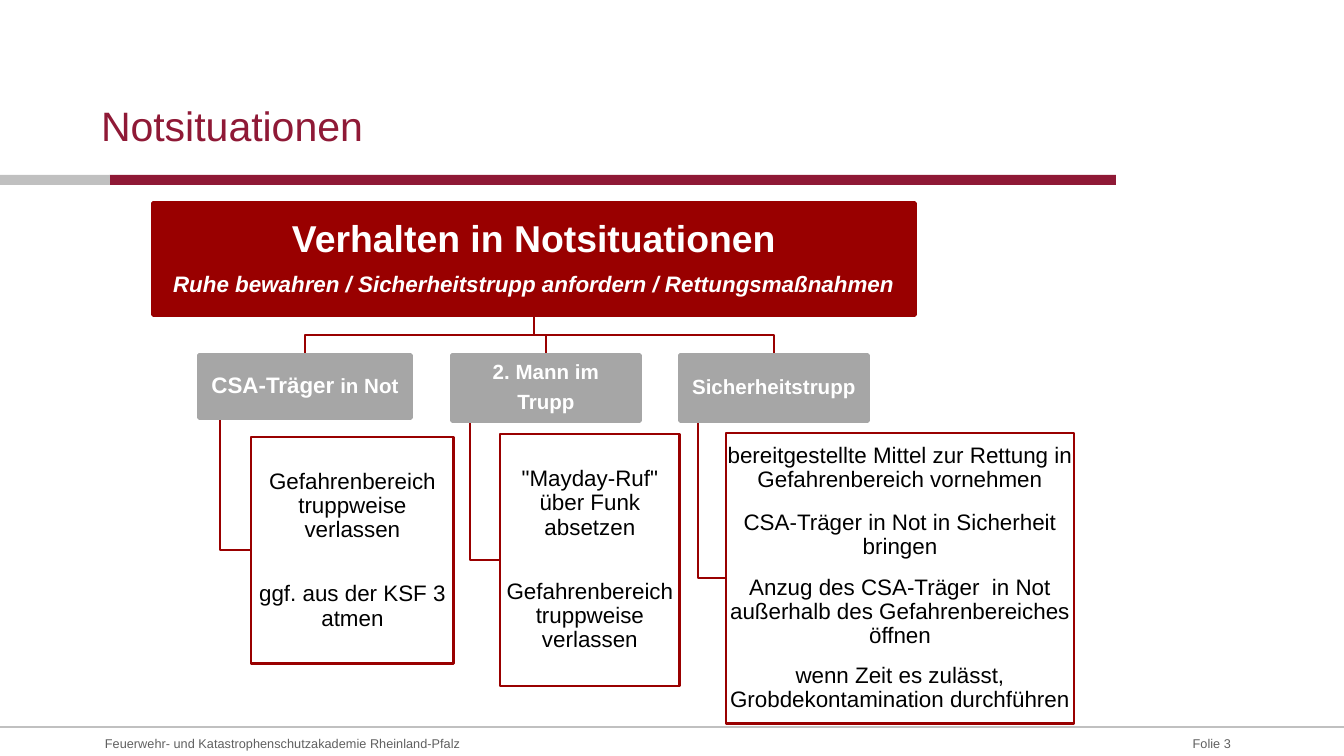
from pptx import Presentation
from pptx.dml.color import RGBColor as RGB
from pptx.enum.shapes import MSO_CONNECTOR as LINK, MSO_SHAPE as FORM
from pptx.enum.text import MSO_ANCHOR as ANCHOR, PP_ALIGN as ALIGN
from pptx.oxml.ns import qn
from pptx.util import Pt
from lxml.etree import SubElement

PX = 914400 / 134.4
WINE, RED, GREY = "8F1936", "990000", "A6A6A6"
SILVER, DARK, WHITE, BLACK = "C0C0C0", "606060", "FFFFFF", "000000"


def emu(*vals):
    return [round(v * PX) for v in vals]


def tint(code):
    return RGB.from_string(code)


class Board:
    """Draws styled elements on the current slide."""

    font = "Arial"

    def __init__(self, slide):
        self.slide = slide
        self.shapes = slide.shapes

    def style(self, font, size, color, bold=False):
        font.name, font.size, font.bold = self.font, Pt(size), bold
        font.color.rgb = tint(color)

    def label(self, shape, lines, size, color, bold=False, align=ALIGN.CENTER,
              anchor=ANCHOR.MIDDLE, pad=1, lead=0.9, gaps=()):
        frame = shape.text_frame
        frame.word_wrap, frame.vertical_anchor = True, anchor
        frame.margin_left = frame.margin_right = emu(pad)[0]
        frame.margin_top = frame.margin_bottom = emu(pad)[0]
        frame.text = "\n".join(lines)
        for par in frame.paragraphs:
            par.alignment, par.line_spacing = align, lead
            par.space_before = par.space_after = Pt(0)
            for run in par.runs:
                self.style(run.font, size, color, bold)
        for par, gap in zip(frame.paragraphs, gaps):
            par.space_after = Pt(gap)
        return frame

    def title(self, text, *area):
        shape = self.shapes.title
        shape.left, shape.top, shape.width, shape.height = emu(*area)
        self.label(shape, [text], 22, WINE, align=ALIGN.LEFT,
                   anchor=ANCHOR.BOTTOM, pad=0, lead=1)

    def note(self, text, align, *area):
        shape = self.shapes.add_textbox(*emu(*area))
        self.label(shape, [text], 6.8, DARK, align=align, pad=0, lead=1)

    def box(self, area, fill, line=None, width=2):
        shape = self.shapes.add_shape(FORM.RECTANGLE, *emu(*area))
        shape.shadow.inherit = False
        shape.fill.solid()
        shape.fill.fore_color.rgb = tint(fill)
        if line:
            shape.line.color.rgb = tint(line)
            shape.line.width = Pt(width)
        else:
            shape.line.fill.background()
        return shape

    def rule(self, *ends):
        line = self.shapes.add_connector(LINK.STRAIGHT, *emu(*ends))
        line.line.color.rgb = tint(SILVER)
        line.line.width = Pt(0.75)
        SubElement(line._element.spPr, qn("a:effectLst"))

    def route(self, start, *stops):
        pen = self.shapes.build_freeform(*start, scale=PX)
        pen.add_line_segments(stops, close=False)
        shape = pen.convert_to_shape()
        shape.shadow.inherit = False
        shape.fill.background()
        shape.line.color.rgb = tint(RED)
        shape.line.width = Pt(1.5)


HEAD = (153, 203, 762, 112)
BRANCHES = [
    ((199, 355, 212, 63), ["CSA-Träger"], (251, 437, 203, 227),
     ["Gefahrenbereich truppweise verlassen", "ggf. aus der KSF 3 atmen"],
     [21.5]),
    ((452, 355, 188, 66), ["2. Mann im", "Trupp"], (500, 434, 180, 252),
     ['"Mayday-Ruf" über Funk absetzen',
      "Gefahrenbereich truppweise verlassen"], [21.5]),
    ((680, 355, 188, 66), ["Sicherheitstrupp"], (726, 433, 348, 291),
     ["bereitgestellte Mittel zur Rettung in Gefahrenbereich vornehmen",
      "CSA-Träger in Not in Sicherheit bringen",
      "Anzug des CSA-Träger  in Not außerhalb des Gefahrenbereiches öffnen",
      "wenn Zeit es zulässt, Grobdekontamination durchführen"],
     [10, 8.6, 8.6]),
]


def main():
    deck = Presentation()
    deck.slide_width, deck.slide_height = emu(1344, 756)
    board = Board(deck.slides.add_slide(deck.slide_layouts[5]))

    board.box((110, 175, 1006, 10), WINE)
    board.box((0, 175, 110, 10), SILVER)
    board.rule(0, 727, 1344, 727)
    board.note("Folie 3", ALIGN.RIGHT, 1067, 729, 164, 28)
    board.note("Feuerwehr- und Katastrophenschutzakademie Rheinland-Pfalz",
               ALIGN.LEFT, 105, 729, 741, 28)
    board.title("Notsituationen", 101, 48, 859, 102)

    left, top, wide, high = HEAD
    root, base = left + wide // 2, top + high
    for tab, _, card, _, _ in BRANCHES:
        x, y, w, h = tab
        mid, bus = x + w // 2, (base + y) // 2
        board.route((root, base), (root, bus), (mid, bus), (mid, y))
        stem, level = x + w // 10, card[1] + card[3] // 2
        board.route((stem, y + h), (stem, level), (card[0], level))

    head = board.label(
        board.box(HEAD, RED, RED),
        ["Verhalten in Notsituationen",
         "Ruhe bewahren / Sicherheitstrupp anfordern / Rettungsmaßnahmen"],
        20, WHITE, True, gaps=[7])
    sub = head.paragraphs[1].runs[0].font
    sub.size, sub.italic = Pt(12), True

    names = []
    for tab, name, card, tasks, gaps in BRANCHES:
        names.append(board.label(board.box(tab, GREY, GREY), name, 11,
                                 WHITE, True, gaps=[4] * (len(name) - 1)))
        board.label(board.box(card, WHITE, RED, 1.5), tasks, 12, BLACK,
                    gaps=gaps)
    first = names[0].paragraphs[0]
    first.runs[0].font.size = Pt(12)
    rest = first.add_run()
    rest.text = " in Not"
    board.style(rest.font, 11, WHITE, True)

    deck.save("out.pptx")


if __name__ == "__main__":
    main()
